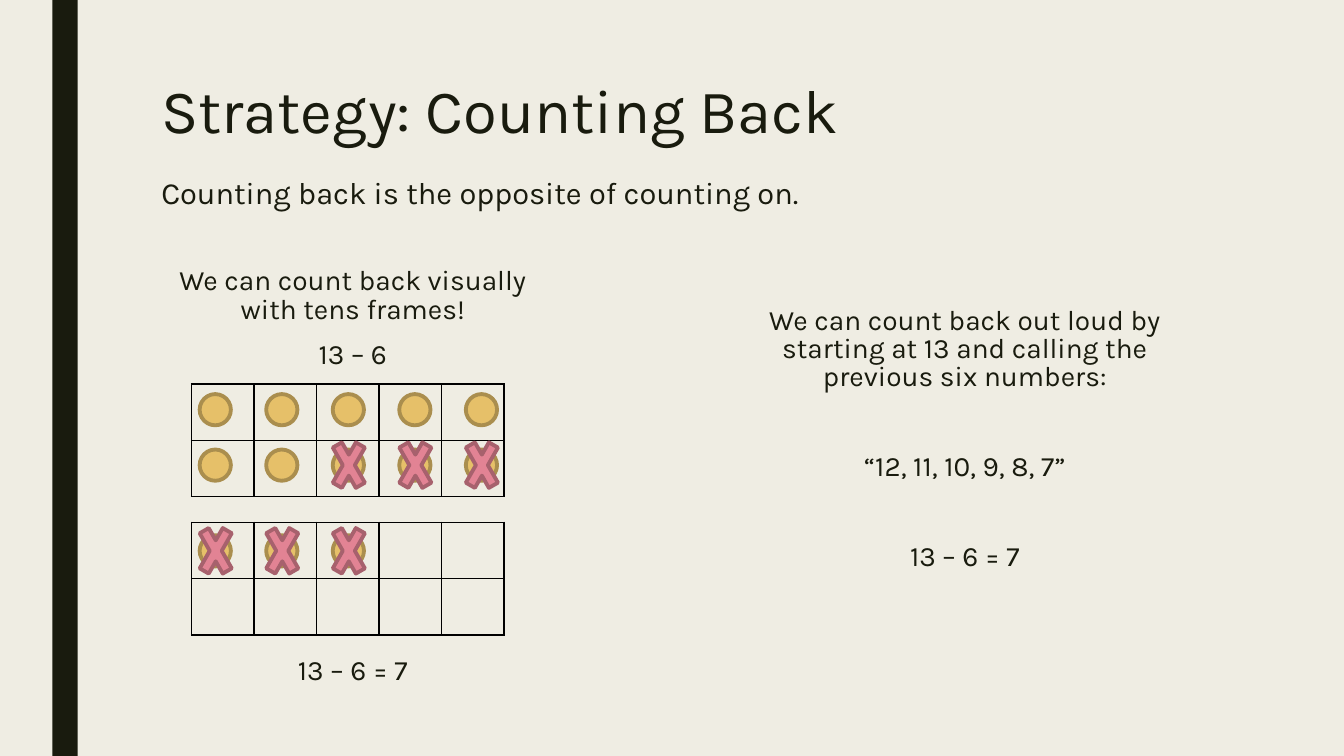
from lxml import etree
from pptx import Presentation
from pptx.dml.color import RGBColor
from pptx.enum.shapes import MSO_SHAPE as SHAPE
from pptx.enum.text import MSO_ANCHOR as ANCHOR, MSO_AUTO_SIZE as AUTOSIZE, PP_ALIGN as ALIGN
from pptx.oxml import parse_xml
from pptx.oxml.ns import nsdecls, qn
from pptx.util import Inches, Pt

INK = "191B0E"


def paint(color_format, color):
    color_format.rgb = RGBColor.from_string(color)


def add_filled(kind, left, top, width, height, color, outline=None):
    """Add a shadowless preset shape, sized in inches, with an optional outline."""
    shape = slide.shapes.add_shape(
        kind, Inches(left), Inches(top), Inches(width), Inches(height))
    shape.shadow.inherit = False
    shape.fill.solid()
    paint(shape.fill.fore_color, color)
    if outline:
        paint(shape.line.color, outline)
        shape.line.width = Pt(2.75)
    else:
        shape.line.fill.background()


prs = Presentation()
prs.slide_width, prs.slide_height = Inches(13.33), Inches(7.5)
slide = prs.slides.add_slide(prs.slide_layouts[3])
slide.background.fill.solid()
paint(slide.background.fill.fore_color, "EFEDE3")
add_filled(SHAPE.RECTANGLE, 0.52, 0, 0.25, 7.5, INK)

# Title and both columns: each line is (text, size, space before)
title, visual_column, spoken_column = slide.placeholders
text_blocks = [
    (title, (1.5, 0.75, 10.5, 1.62), 0.05, 0.89, 0, ALIGN.LEFT, [
        ("Strategy: Counting Back", 44, 0),
        ("Counting back is the opposite of counting on.", 22, 23)]),
    (visual_column, (1.38, 2.6, 4.24, 4.35), 0.05, 0.86, 2, ALIGN.CENTER, [
        ("We can count back visually with tens frames!", 20, 0),
        ("13 – 6", 20, 10),
        ("13 – 6 = 7", 20, 203)]),
    (spoken_column, (7.14, 2.5, 4.86, 3.92), 0.55, 0.84, 2, ALIGN.CENTER, [
        ("We can count back out loud by starting at 13 and calling "
         "the previous six numbers:", 20, 0),
        ("“12, 11, 10, 9, 8, 7”", 20, 42),
        ("13 – 6 = 7", 20, 42)]),
]
for holder, box, margin_top, line_spacing, space_after, align, lines in text_blocks:
    holder.left, holder.top, holder.width, holder.height = map(Inches, box)
    frame = holder.text_frame
    frame.word_wrap = True
    frame.auto_size = AUTOSIZE.NONE
    frame.vertical_anchor = ANCHOR.TOP
    frame.margin_top = Inches(margin_top)
    frame.text = "\n".join(text for text, _, _ in lines)
    for paragraph, (_, size, space_before) in zip(frame.paragraphs, lines):
        paragraph.alignment = align
        paragraph.line_spacing = line_spacing
        paragraph.space_before = Pt(space_before)
        paragraph.space_after = Pt(space_after)
        paragraph.font.name = "Karla"
        paragraph.font.size = Pt(size)
        paint(paragraph.font.color, INK)
        properties = paragraph._p.get_or_add_pPr()
        properties.set("marL", "0")
        properties.set("indent", "0")
        etree.SubElement(properties, qn("a:buNone"))
        properties.append(properties.find(qn("a:defRPr")))

# Two empty tens frames
for frame_top in (3.81, 5.18):
    tens_frame = slide.shapes.add_table(
        2, 5, Inches(1.9), Inches(frame_top), Inches(3.1), Inches(1.12)).table
    tens_frame.first_row = tens_frame.horz_banding = False
    for column in tens_frame.columns:
        column.width = Inches(0.62)
    for cell in tens_frame.iter_cells():
        cell_properties = cell._tc.get_or_add_tcPr()
        for side in ("lnL", "lnR", "lnT", "lnB"):
            cell_properties.append(parse_xml(
                f'<a:{side} {nsdecls("a")} w="12700"><a:solidFill>'
                f'<a:srgbClr val="000000"/></a:solidFill></a:{side}>'))
        cell.fill.background()

# Thirteen counters, six of them crossed out: (top, count, crossed columns)
for counter_top, count, crossed in ((3.91, 5, ()), (4.46, 5, (2, 3, 4)), (5.31, 3, (0, 1, 2))):
    for column in range(count):
        counter_left = 1.98 + 0.66 * column
        add_filled(SHAPE.OVAL, counter_left, counter_top, 0.31, 0.31, "E6C069", "AA8E4E")
        if column in crossed:
            add_filled(SHAPE.MATH_MULTIPLY, counter_left - 0.06, counter_top - 0.23,
                       0.44, 0.77, "E28394", "A7616D")

prs.save("out.pptx")
